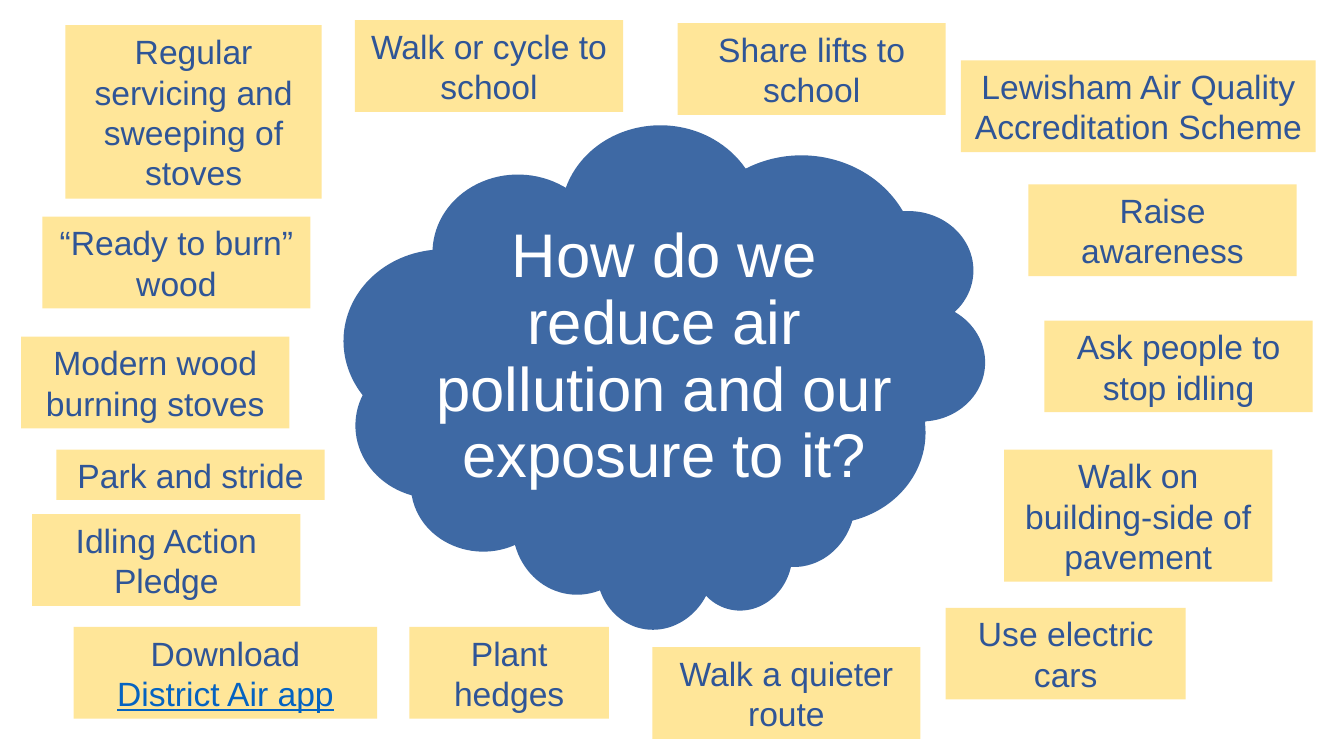
from dataclasses import dataclass

from pptx import Presentation
from pptx import util as u
from pptx.dml.color import RGBColor
from pptx.enum import shapes, text

PX = 9144  # EMU in one px, 100 px to the inch
FONT = "Arial"
COLORS = {
    "cloud": "3E69A4",
    "note": "FFE699",
    "ink": "2F5597",
    "link": "0563C1",
    "white": "FFFFFF",
}


@dataclass
class Cloud:
    left: int
    top: int
    width: int
    height: int
    turn: float


@dataclass
class Note:
    words: str
    left: int
    top: int
    width: int = 266
    height: int = 91
    link: str = ""


CLOUDS = [
    Cloud(341, 126, 636, 428, 181.7),
    Cloud(478, 326, 372, 299, 12.2),
]

NOTES = [
    Note("Share lifts to school", 672, 23),
    Note("Park and stride", 56, 446, height=50),
    Note("Walk or cycle to school", 352, 20),
    Note("Walk a quieter route", 647, 642),
    Note("Plant hedges", 406, 622, width=198),
    Note("Raise awareness", 1020, 183),
    Note("Ask people to stop idling", 1036, 318),
    Note("Walk on building-side of pavement", 996, 446, height=131),
    Note("Use electric cars", 938, 603, width=238),
    Note("Modern wood burning stoves", 21, 334),
    Note("Regular servicing and sweeping of stoves", 65, 25, 254, 172),
    Note("“Ready to burn”\nwood", 42, 215),
    Note("Download", 73, 622, width=301, link="District Air app"),
    Note("Idling Action Pledge", 32, 510),
    Note("Lewisham Air Quality Accreditation Scheme", 953, 60, width=352),
]


def color(name: str) -> RGBColor:
    return RGBColor.from_string(COLORS[name])


def frame(left: int, top: int, width: int, height: int) -> list[int]:
    return [n * PX for n in (left, top, width, height)]


def style(para, size: int, tint: str) -> None:
    para.alignment = text.PP_ALIGN.CENTER
    font = para.font
    font.name, font.size = FONT, u.Pt(size)
    font.color.rgb = color(tint)


def paint(shape, tint: str) -> None:
    shape.shadow.inherit = False
    shape.fill.solid()
    shape.fill.fore_color.rgb = color(tint)
    shape.line.fill.background()


def draw_cloud(group, cloud: Cloud) -> None:
    box = frame(cloud.left, cloud.top, cloud.width, cloud.height)
    shape = group.shapes.add_shape(shapes.MSO_SHAPE.CLOUD, *box)
    shape.rotation = cloud.turn
    paint(shape, "cloud")


def draw_title(title) -> None:
    title.left, title.top, title.width, title.height = frame(415, 218, 488, 145)
    body = title.text_frame
    body.text = "How do we reduce air pollution and our exposure to it?"
    body.word_wrap = True
    body.auto_size = text.MSO_AUTO_SIZE.NONE
    body.vertical_anchor = text.MSO_ANCHOR.TOP
    para = body.paragraphs[0]
    para.line_spacing = 0.9
    style(para, 44, "white")


def draw_note(slide, note: Note) -> None:
    box = frame(note.left, note.top, note.width, note.height)
    shape = slide.shapes.add_shape(shapes.MSO_SHAPE.RECTANGLE, *box)
    paint(shape, "note")
    body = shape.text_frame
    body.word_wrap = True
    body.auto_size = text.MSO_AUTO_SIZE.SHAPE_TO_FIT_TEXT
    body.text = note.words
    for para in body.paragraphs:
        style(para, 24, "ink")
    if note.link:
        para = body.add_paragraph()
        para.text = note.link
        style(para, 24, "link")
        para.font.underline = True


def main() -> None:
    deck = Presentation()
    deck.slide_width, deck.slide_height = 1333 * PX, 750 * PX
    slide = deck.slides.add_slide(deck.slide_layouts.get_by_name("Title Only"))

    # Central cloud
    group = slide.shapes.add_group_shape()
    for cloud in CLOUDS:
        draw_cloud(group, cloud)

    # Question, brought in front of the cloud
    title = slide.shapes.title
    draw_title(title)
    group.element.addnext(title.element)

    # Ideas around the cloud
    for note in NOTES:
        draw_note(slide, note)

    deck.save("out.pptx")


if __name__ == "__main__":
    main()
